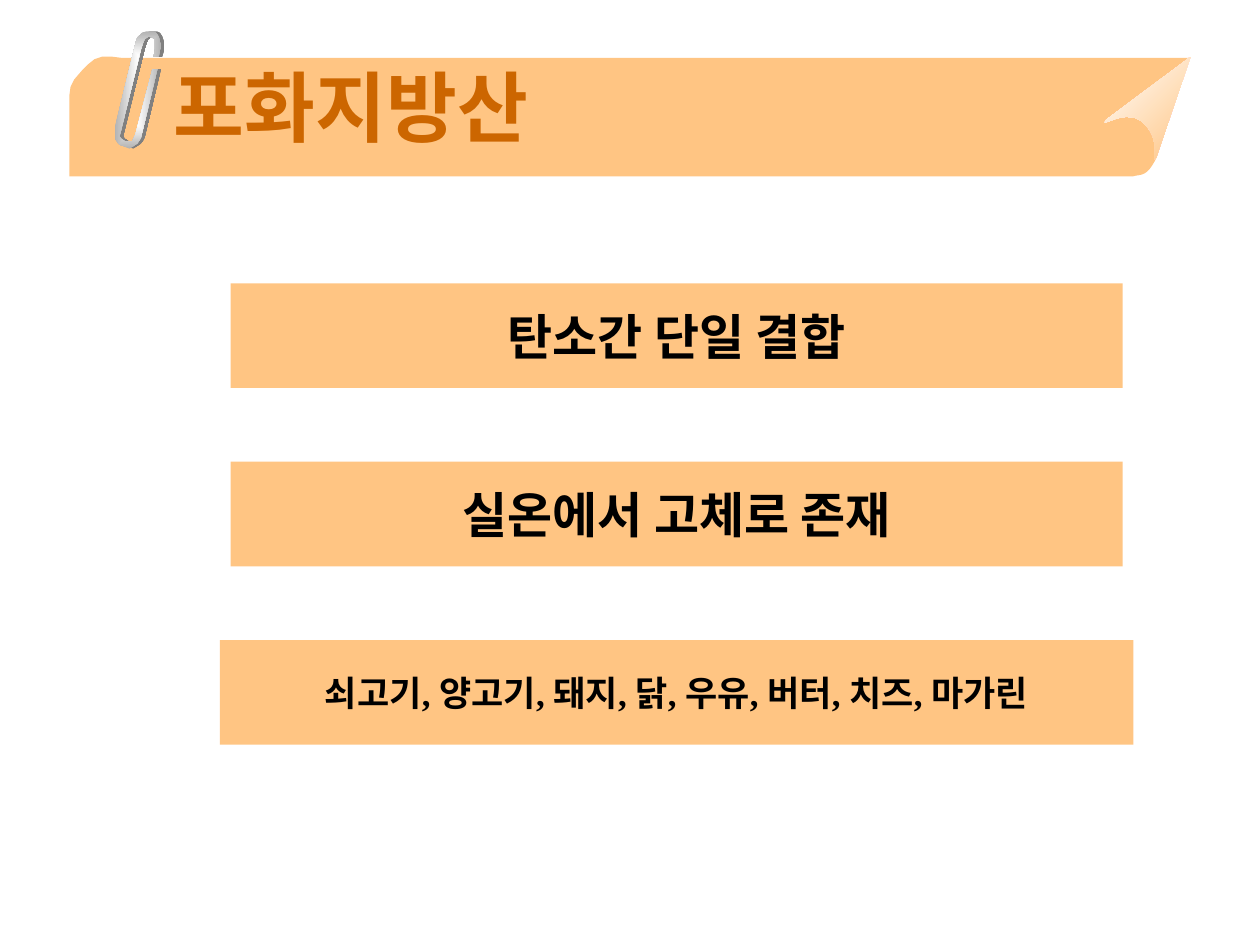
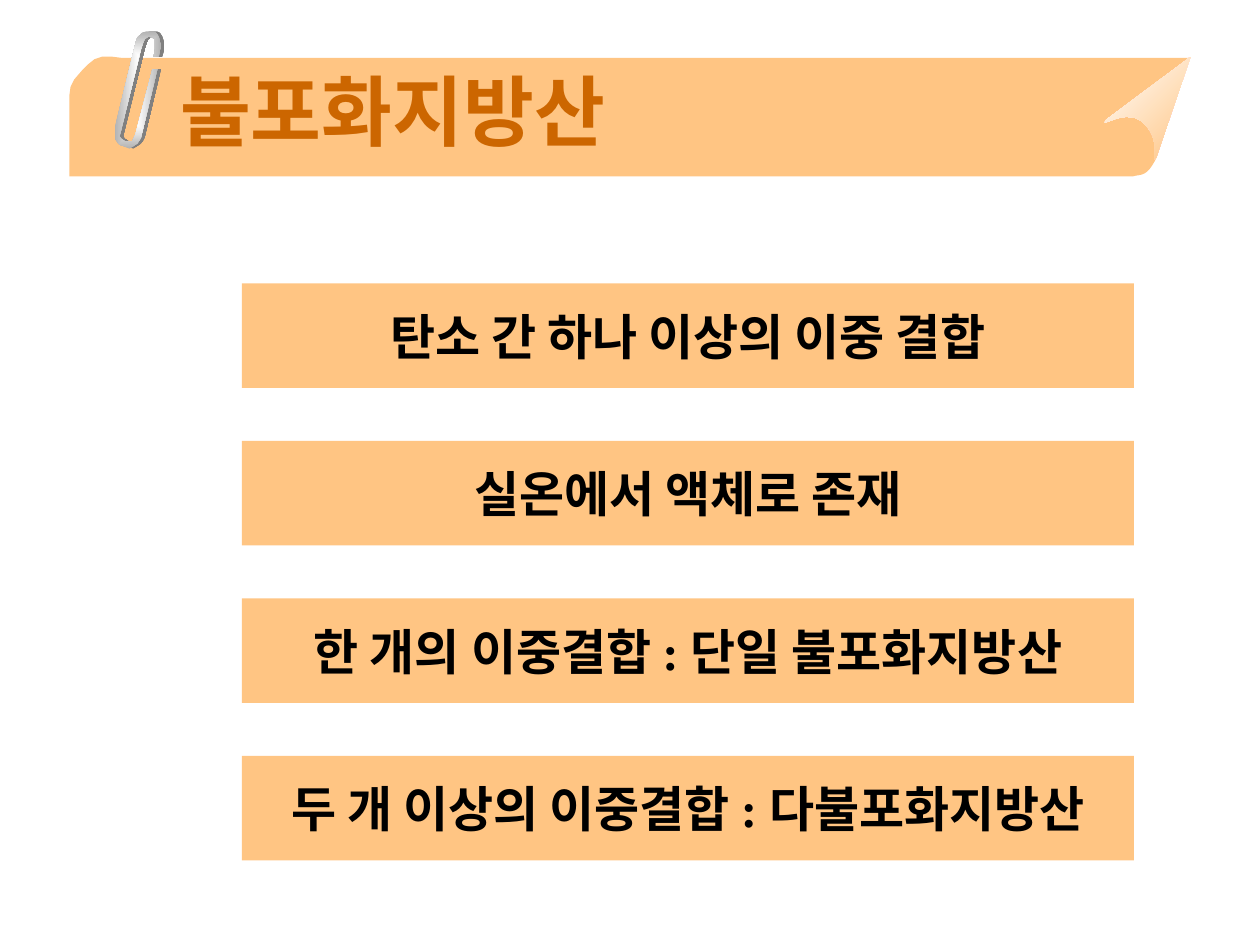
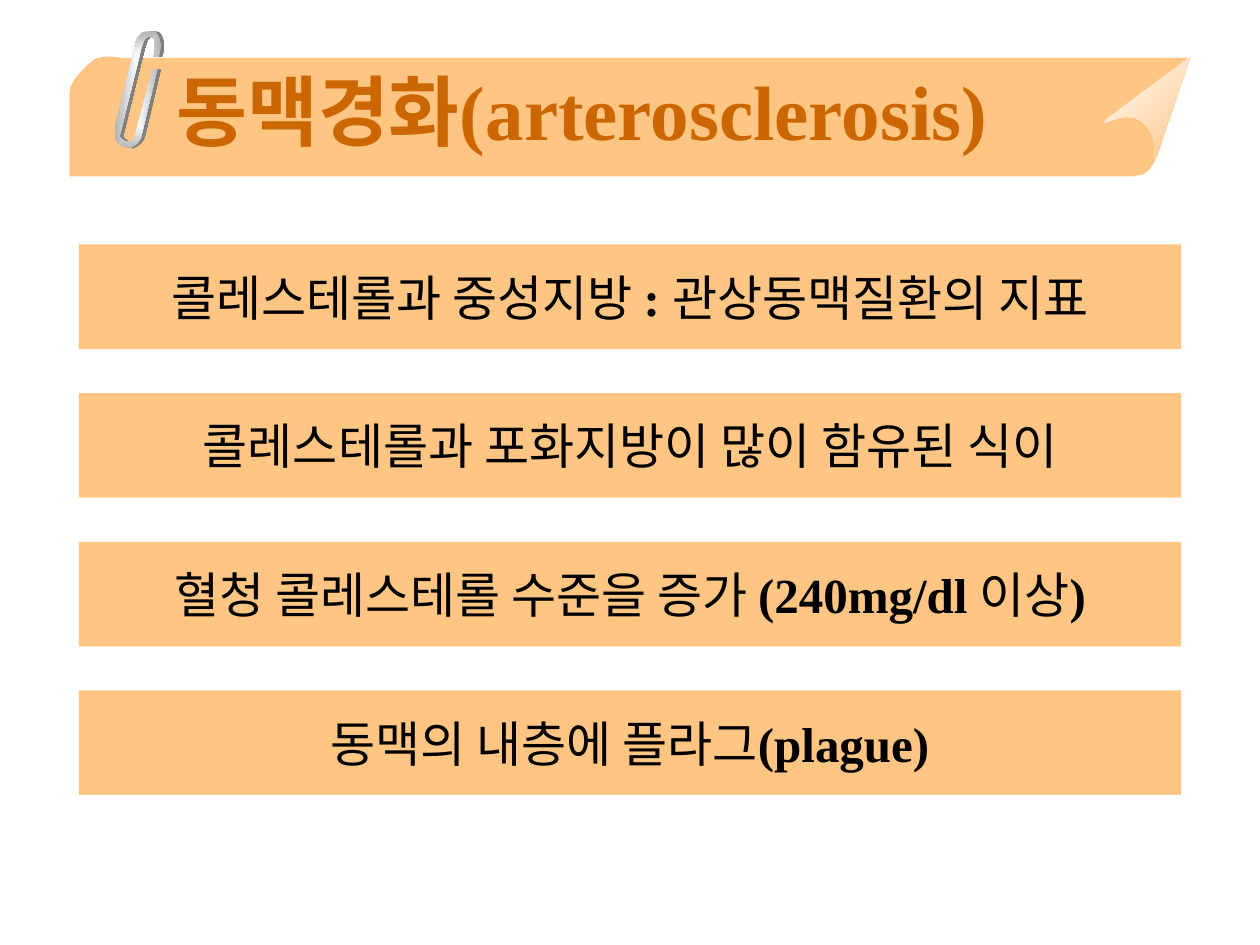
from lxml.etree import SubElement
from pptx import Presentation
from pptx.dml.color import RGBColor
from pptx.enum.shapes import MSO_SHAPE
from pptx.enum.text import MSO_ANCHOR, MSO_AUTO_SIZE, PP_ALIGN
from pptx.oxml.ns import qn
from pptx.util import Inches, Pt

COLOURS = {
    "band": "FFC583",
    "title": "CC6600",
    "text": "000000",
    "white": "FFFFFF",
    "clip_light": "FDFDFD",
    "clip_dark": "B2B2B2",
    "clip_shadow": "808080",
}
KOREAN, LATIN = "Noto Sans CJK KR", "Times New Roman"
ROW_HEIGHT = 0.83
TITLE_HEIGHT = 0.95
CURVE_STEPS = 12

# Outlines in inches: a pair is a corner, six numbers are a Bezier curve.
BAND = [
    (0.55, 1.4), (8.99, 1.4), (9.06, 1.38, 9.1, 1.41, 9.18, 1.25),
    (9.44, 0.46), (0.97, 0.46), (0.89, 0.45), (0.81, 0.45), (0.75, 0.47),
    (0.7, 0.51), (0.65, 0.56), (0.59, 0.63), (0.56, 0.69), (0.55, 0.76),
]
FOLD = [
    (9.45, 0.45), (9.18, 1.24), (9.12, 1.33, 9.23, 1.14, 9.09, 0.99),
    (8.95, 0.83, 8.71, 1.04, 8.78, 0.95),
]
CLIP = [
    (1.21, 0.55), (1.25, 0.55), (1.12, 1.09), (1.11, 1.11), (1.09, 1.14),
    (1.06, 1.16), (1.03, 1.18), (0.98, 1.16), (0.95, 1.15), (0.94, 1.14),
    (0.91, 1.1), (0.91, 1.02), (1.08, 0.33), (1.09, 0.3), (1.11, 0.28),
    (1.13, 0.26), (1.16, 0.25), (1.22, 0.25), (1.24, 0.26), (1.26, 0.29),
    (1.27, 0.32), (1.28, 0.35), (1.28, 0.38), (1.26, 0.45), (1.22, 0.45),
    (1.23, 0.39), (1.23, 0.31), (1.21, 0.3), (1.18, 0.29), (1.15, 0.31),
    (1.14, 0.33), (1.13, 0.36), (1.12, 0.39), (0.96, 1.04), (0.95, 1.08),
    (0.96, 1.1), (0.99, 1.12), (1.05, 1.12), (1.07, 1.08), (1.08, 1.05),
]

# In every text, "|" switches between Korean and Latin type.
FOODS = ["쇠고기", "양고기", "돼지", "닭", "우유", "버터", "치즈", "마가린"]
PAGES = [
    {
        "title": "포화지방산",
        "title_left": 1.28, "title_width": 3.87, "title_middle": 0.84,
        "centre": 5.37, "top": 2.25, "pitch": 1.415, "bold": True,
        "rows": [
            ("탄소간 단일 결합", 28, 7.08),
            ("실온에서 고체로 존재", 28, 7.08),
            ("|, |".join(FOODS), 20, 7.25),
        ],
    },
    {
        "title": "불포화지방산",
        "title_left": 1.33, "title_width": 4.29, "title_middle": 0.87,
        "centre": 5.46, "top": 2.25, "pitch": 1.25, "bold": True,
        "rows": [
            ("탄소 간 하나 이상의 이중 결합", 28, 7.08),
            ("실온에서 액체로 존재", 28, 7.08),
            ("한 개의 이중결합 |: |단일 불포화지방산", 28, 7.08),
            ("두 개 이상의 이중결합 |: |다불포화지방산", 28, 7.08),
        ],
    },
    {
        "title": "동맥경화|(arterosclerosis)",
        "title_left": 1.3, "title_width": 7.38, "title_middle": 0.87,
        "centre": 5, "top": 1.94, "pitch": 1.18, "bold": False,
        "rows": [
            ("콜레스테롤과 중성지방 |: |관상동맥질환의 지표", 28, 8.75),
            ("콜레스테롤과 포화지방이 많이 함유된 식이", 28, 8.75),
            ("혈청 콜레스테롤 수준을 증가 |(240mg/dl |이상|)", 28, 8.75),
            ("동맥의 내층에 플라그|(plague)", 28, 8.75),
        ],
    },
]


def add_outline(page, outline):
    """Draw a closed outline, following each curve in short steps."""
    points = []
    for step in outline:
        if len(step) == 2:
            points.append(step)
            continue
        x0, y0 = points[-1]
        x1, y1, x2, y2, x3, y3 = step
        for count in range(1, CURVE_STEPS + 1):
            t = count / CURVE_STEPS
            u = 1 - t
            points.append((
                u**3 * x0 + 3 * u * u * t * x1 + 3 * u * t * t * x2 + t**3 * x3,
                u**3 * y0 + 3 * u * u * t * y1 + 3 * u * t * t * y2 + t**3 * y3,
            ))
    corners = [(Inches(x), Inches(y)) for x, y in points]
    builder = page.shapes.build_freeform(*corners[0])
    builder.add_line_segments(corners[1:], close=True)
    shape = builder.convert_to_shape()
    shape.shadow.inherit = False
    shape.line.fill.background()
    return shape


def write_text(box, text, size, colour, bold, align, wrap):
    """Write one paragraph; Latin parts are always bold."""
    frame = box.text_frame
    settings = {
        "word_wrap": wrap,
        "auto_size": MSO_AUTO_SIZE.NONE,
        "vertical_anchor": MSO_ANCHOR.MIDDLE,
    }
    for name, value in settings.items():
        setattr(frame, name, value)
    para = frame.paragraphs[0]
    para.alignment = align
    for index, part in enumerate(text.split("|")):
        is_latin = index % 2 == 1
        span = para.add_run()
        span.text = part
        formats = {
            "size": Pt(size),
            "bold": bold or is_latin,
            "name": LATIN if is_latin else KOREAN,
        }
        for name, value in formats.items():
            setattr(span.font, name, value)
        span.font.color.rgb = RGBColor.from_string(COLOURS[colour])
        SubElement(span.font._element, qn("a:ea"), typeface=formats["name"])


deck = Presentation()
deck.slide_width, deck.slide_height = Inches(10), Inches(7.5)
layout = deck.slide_layouts.get_by_name("Title Only")
pages = [deck.slides.add_slide(layout) for _ in PAGES]

# The band, its folded corner and the paper clip belong to the layout.
band, fold, clip = [add_outline(pages[0], outline) for outline in (BAND, FOLD, CLIP)]
band.fill.solid()
band.fill.fore_color.rgb = RGBColor.from_string(COLOURS["band"])
for shape, shades in ((fold, ("white", "band")), (clip, ("clip_light", "clip_dark"))):
    shape.fill.gradient()
    shape.fill.gradient_angle = 315
    for stop, shade in zip(shape.fill.gradient_stops, shades):
        stop.color.rgb = RGBColor.from_string(COLOURS[shade])

gradient = clip.element.spPr.find(qn("a:gradFill"))
gradient.remove(gradient.find(qn("a:lin")))
centre_path = SubElement(gradient, qn("a:path"), path="rect")
SubElement(centre_path, qn("a:fillToRect"), l="50000", t="50000", r="50000", b="50000")
effects = clip.element.spPr.find(qn("a:effectLst"))
shadow = SubElement(effects, qn("a:outerShdw"), dist=str(Pt(2)), dir="0")
SubElement(shadow, qn("a:srgbClr"), val=COLOURS["clip_shadow"])

for position, shape in enumerate((band, fold, clip), start=2):
    layout.shapes.element.insert(position, shape.element)

for page, content in zip(pages, PAGES):
    title = page.shapes.title
    title.left = Inches(content["title_left"])
    title.top = Inches(content["title_middle"] - TITLE_HEIGHT / 2)
    title.width, title.height = Inches(content["title_width"]), Inches(TITLE_HEIGHT)
    write_text(title, content["title"], 44, "title", True, PP_ALIGN.LEFT, True)

    for index, (text, size, width) in enumerate(content["rows"]):
        row = page.shapes.add_shape(
            MSO_SHAPE.RECTANGLE,
            Inches(content["centre"] - width / 2),
            Inches(content["top"] + index * content["pitch"]),
            Inches(width),
            Inches(ROW_HEIGHT),
        )
        row.shadow.inherit = False
        row.fill.solid()
        row.fill.fore_color.rgb = RGBColor.from_string(COLOURS["band"])
        row.line.fill.background()
        write_text(row, text, size, "text", content["bold"], PP_ALIGN.CENTER, False)

deck.save("out.pptx")
